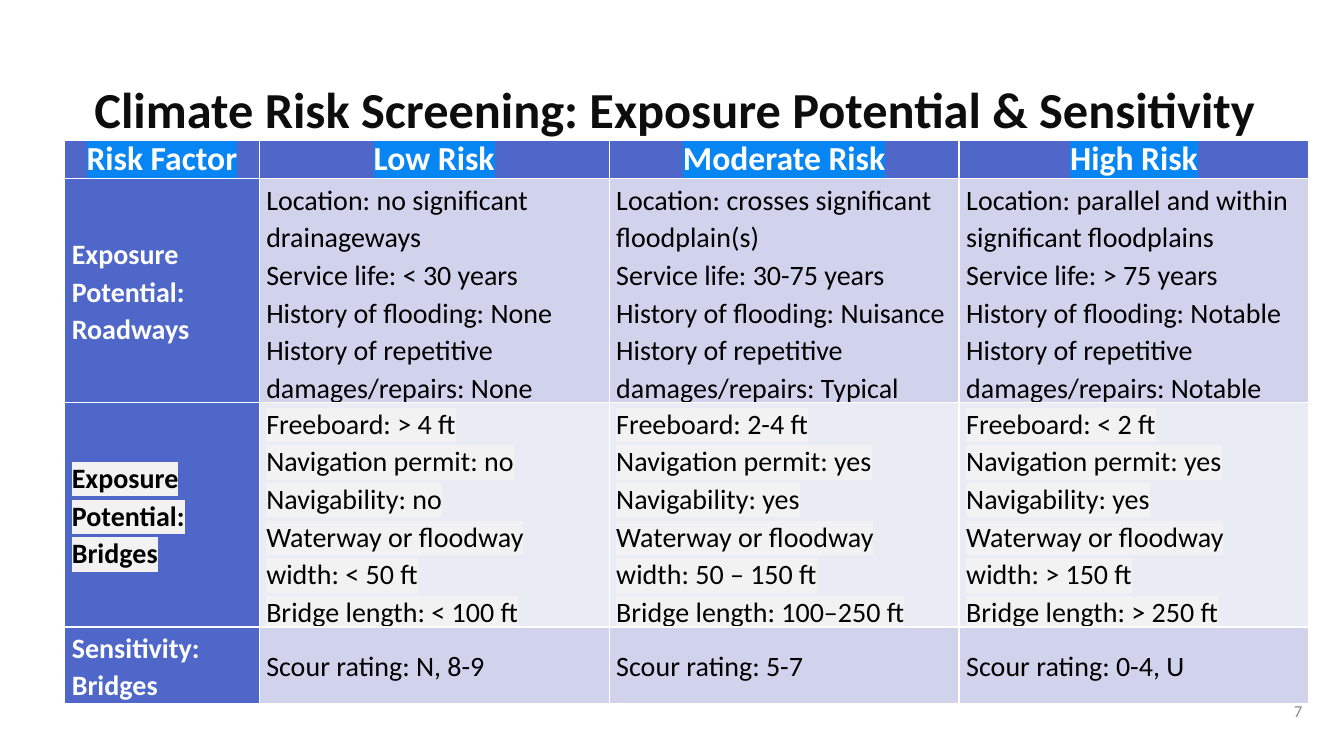
from lxml import etree
from pptx import Presentation
from pptx.dml.color import RGBColor
from pptx.enum.text import MSO_ANCHOR, PP_ALIGN
from pptx.oxml.ns import qn
from pptx.util import Cm, Pt

LEFT, CENTER, RIGHT = PP_ALIGN.LEFT, PP_ALIGN.CENTER, PP_ALIGN.RIGHT
MIDDLE, BOTTOM = MSO_ANCHOR.MIDDLE, MSO_ANCHOR.BOTTOM
TITLE_ONLY = 5
FONT = "Calibri"
WHITE, BLACK, BLUE, GREY = "FFFFFF", "000000", "4E67C8", "F2F2F2"
BANDS = ["D0D3EB", "E9EBF5"]
COLUMN_WIDTHS = [4.9, 8.82, 8.82, 8.82]
ROW_HEIGHTS = [0.86, 5.61, 5.61, 1.9]
HEADERS = ["Risk Factor", "Low Risk", "Moderate Risk", "High Risk"]
FACTORS = [
    ("Exposure Potential: Roadways", WHITE, None, [
        ("Location: ", ["no significant drainageways",
                        "crosses significant floodplain(s)",
                        "parallel and within significant floodplains"]),
        ("Service life: ", ["< 30 years", "30-75 years", "> 75 years"]),
        ("History of flooding: ", ["None", "Nuisance", "Notable"]),
        ("History of repetitive damages/repairs: ", ["None", "Typical", "Notable"]),
    ]),
    ("Exposure Potential: Bridges", BLACK, GREY, [
        ("Freeboard: ", ["> 4 ft", "2-4 ft", "< 2 ft"]),
        ("Navigation permit: ", ["no", "yes", "yes"]),
        ("Navigability: ", ["no", "yes", "yes"]),
        ("Waterway or floodway width: ", ["< 50 ft", "50 – 150 ft", "> 150 ft"]),
        ("Bridge length: ", ["< 100 ft", "100–250 ft", "> 250 ft"]),
    ]),
    ("Sensitivity: Bridges", WHITE, None, [
        ("Scour rating: ", ["N, 8-9", "5-7", "0-4, U"]),
    ]),
]


def rgb(value):
    return RGBColor.from_string(value)


def highlight(r, color):
    mark = etree.Element(qn("a:highlight"))
    etree.SubElement(mark, qn("a:srgbClr"), val=color)
    r.font._rPr.find(qn("a:solidFill")).addnext(mark)


def write(tf, text, size=20, color=BLACK, bold=False, align=LEFT, spacing=None, mark=None):
    for i, line in enumerate(text.split("\n")):
        p = tf.add_paragraph() if i else tf.paragraphs[0]
        p.alignment = align
        p.line_spacing = spacing
        r = p.add_run()
        r.text = line
        r.font.name = FONT
        r.font.size = Pt(size)
        r.font.bold = bold
        r.font.color.rgb = rgb(color)
        if mark:
            highlight(r, mark)


def add_title(s, text):
    title = s.shapes.title
    title.left, title.top, title.width, title.height = Cm(1), Cm(1.5), Cm(32.03), Cm(2.44)
    title.text_frame.vertical_anchor = MIDDLE
    write(title.text_frame, text, size=36, color="0D0D0D", bold=True, align=CENTER)


def add_page_number(s, number):
    tf = s.shapes.add_textbox(Cm(25.17), Cm(17.58), Cm(7.9), Cm(0.64)).text_frame
    tf.word_wrap = True
    tf.vertical_anchor = MIDDLE
    write(tf, number, size=12, color="8C8C8C", align=RIGHT)


def fill_cell(cell, text, fill, anchor=MIDDLE, spacing=1.1, **text_format):
    cell.fill.solid()
    cell.fill.fore_color.rgb = rgb(fill)
    cell.margin_left = cell.margin_right = Cm(0.18)
    cell.margin_top = cell.margin_bottom = Cm(0.03)
    cell.vertical_anchor = anchor
    write(cell.text_frame, text, spacing=spacing, **text_format)


def add_risk_table(s):
    table = s.shapes.add_table(len(ROW_HEIGHTS), len(COLUMN_WIDTHS), Cm(1.63), Cm(3.53),
                               Cm(sum(COLUMN_WIDTHS)), Cm(sum(ROW_HEIGHTS))).table
    table.first_col = True
    for column, width in zip(table.columns, COLUMN_WIDTHS):
        column.width = Cm(width)
    for row, height in zip(table.rows, ROW_HEIGHTS):
        row.height = Cm(height)
    for col, header in enumerate(HEADERS):
        fill_cell(table.cell(0, col), header, BLUE, anchor=BOTTOM, spacing=0.9, size=24,
                  color=WHITE, bold=True, align=CENTER, mark="0785F2")
    for row, (factor, color, mark, criteria) in enumerate(FACTORS, 1):
        fill_cell(table.cell(row, 0), factor, BLUE, color=color, bold=True, mark=mark)
        for level in range(3):
            text = "\n".join(label + values[level] for label, values in criteria)
            fill_cell(table.cell(row, level + 1), text, BANDS[(row - 1) % 2], mark=mark)


def main():
    prs = Presentation()
    prs.slide_width, prs.slide_height = Cm(33.87), Cm(19.05)
    s = prs.slides.add_slide(prs.slide_layouts[TITLE_ONLY])
    add_title(s, "Climate Risk Screening: Exposure Potential & Sensitivity")
    add_page_number(s, "7")
    add_risk_table(s)
    prs.save("out.pptx")


if __name__ == "__main__":
    main()
